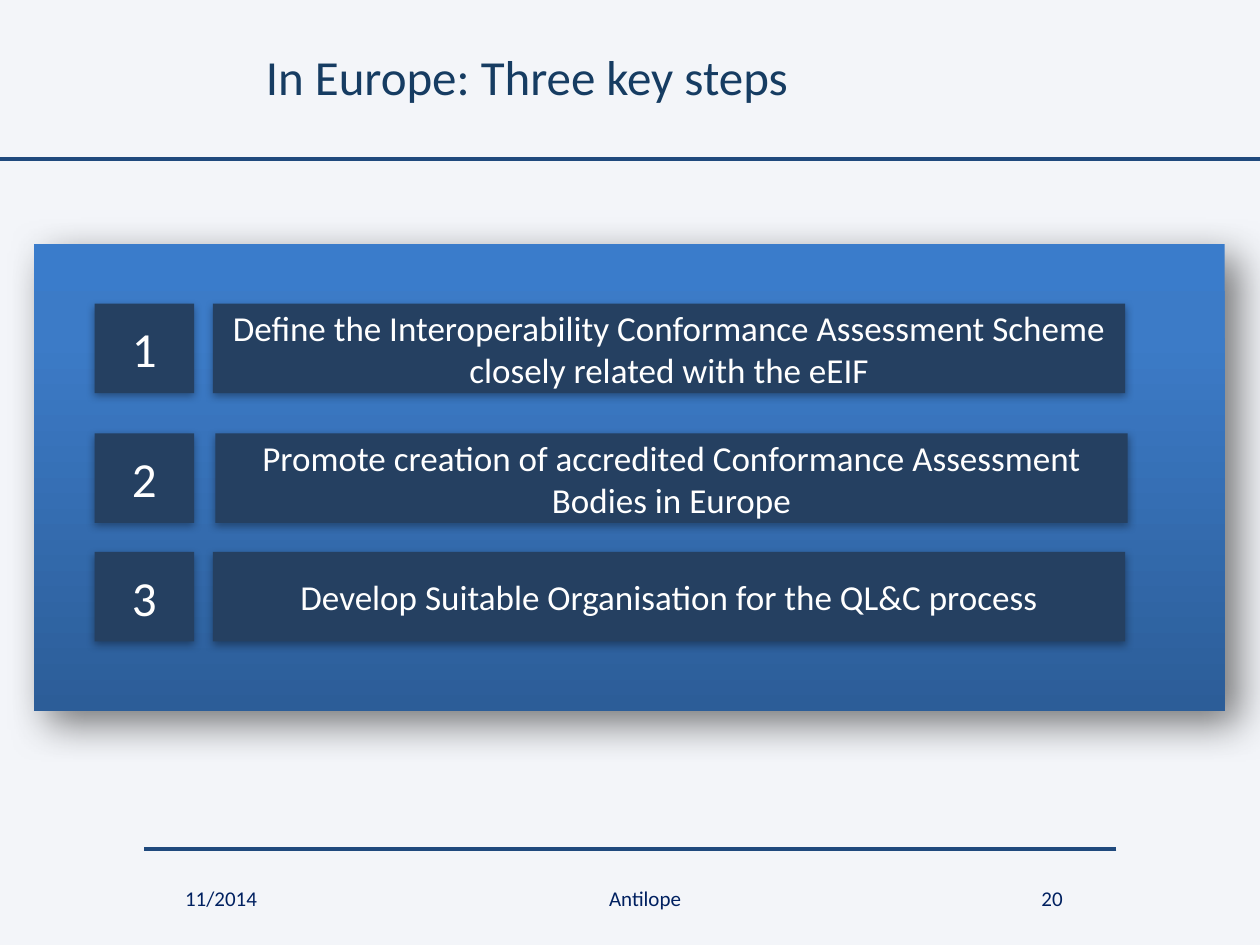
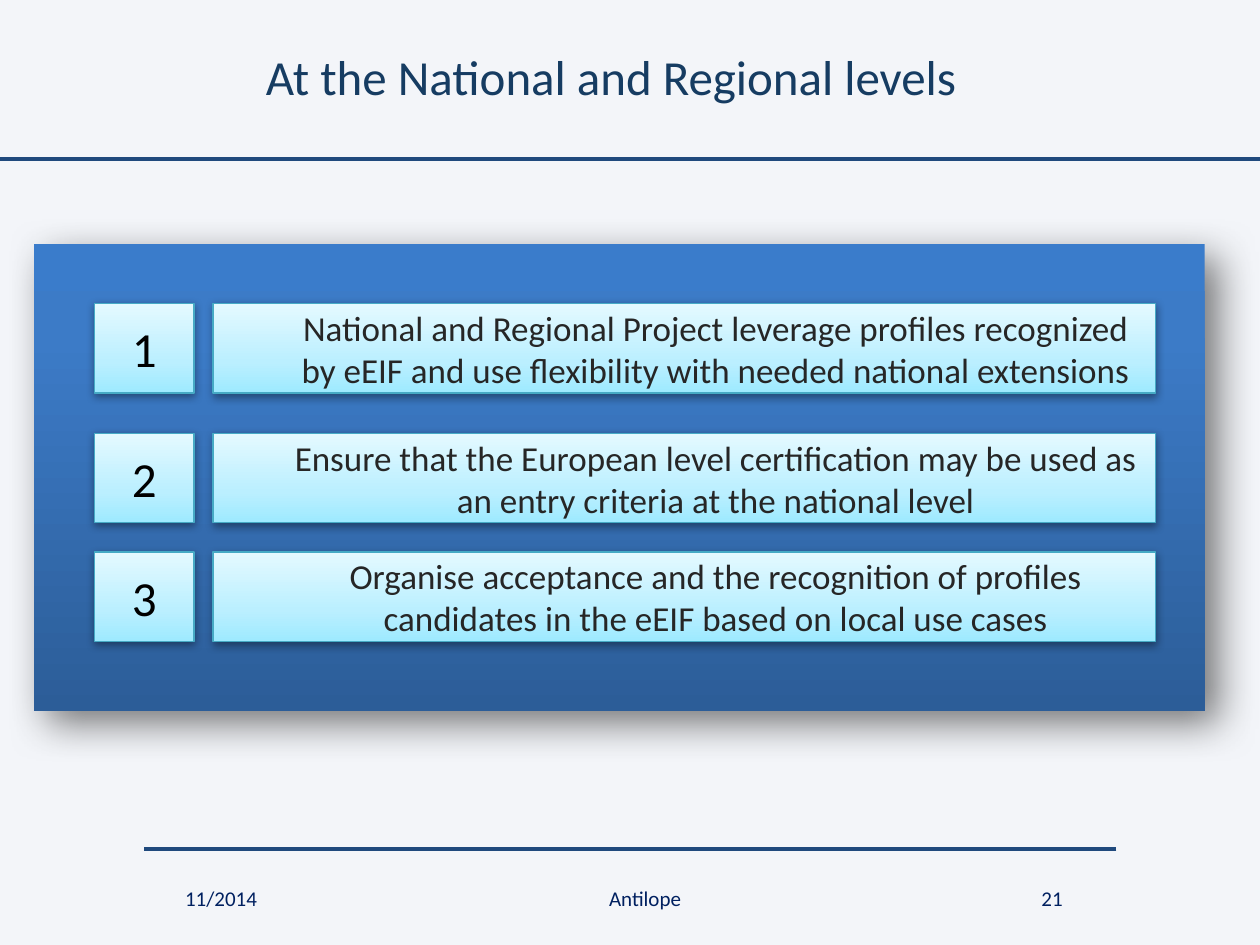
from lxml import etree
from pptx import Presentation
from pptx.dml.color import RGBColor
from pptx.enum import shapes, text
from pptx.oxml import ns
from pptx.util import Inches, Pt

FONT = "Calibri"
COLORS = {
    "background": "F3F5F9", "rule": "1F497D", "title": "163C62", "footer": "002060",
    "navy": "254061", "white": "FFFFFF", "black": "000000", "charcoal": "262626",
    "aqua_line": "46AAC5", "panel_shadow": "333333",
}
PANEL_STYLE = {
    "gradient": [(0, "3A7CCB"), (20, "3C7BC7"), (100, "2C5D98")], "angle": 90,
    "shadow": ("panel_shadow", 65, 23, 11, 45),
}
NAVY_STYLE = {
    "fill": "navy", "shadow": ("black", 35, 5, 1.8, 90),
    "number_color": "white", "step_color": "white", "indent": 0,
}
AQUA_STYLE = {
    "gradient": [(0, "9EEAFF"), (35, "BBEFFF"), (100, "E4F9FF")], "angle": 270,
    "line": "aqua_line", "shadow": ("black", 38, 5, 1.6, 90),
    "number_color": "black", "step_color": "charcoal", "indent": 0.5,
}
SLIDES = [
    {
        "title": "In Europe: Three key steps", "number": 20,
        "panel_width": 9.45, "step_width": 7.24, "step_lefts": (1.69, 1.71, 1.69),
        "style": NAVY_STYLE,
        "steps": [
            "Define the Interoperability Conformance Assessment Scheme closely related with the eEIF",
            "Promote creation of accredited Conformance Assessment Bodies in Europe",
            "Develop Suitable Organisation for the QL&C process",
        ],
    },
    {
        "title": "At the National and Regional levels", "number": 21,
        "panel_width": 9.29, "step_width": 7.48, "step_lefts": (1.69, 1.69, 1.69),
        "style": AQUA_STYLE,
        "steps": [
            "National and Regional Project leverage profiles recognized by eEIF and use flexibility with needed national extensions",
            "Ensure that the European level certification may be used as an entry criteria at the national level",
            "Organise acceptance and the recognition of profiles candidates in the eEIF based on local use cases",
        ],
    },
]
RULES = [(10, 0, 1.26), (8.86, 1.14, 6.74)]
ROW_TOPS = (2.41, 3.44, 4.38)
ROW_HEIGHT = 0.71
NUMBER_LEFT, NUMBER_WIDTH = 0.75, 0.79


def rgb(name):
    return RGBColor.from_string(COLORS[name])


def write(shape, content, size, color, align=text.PP_ALIGN.CENTER):
    frame = shape.text_frame
    frame.word_wrap = True
    frame.text = content
    paragraph = frame.paragraphs[0]
    paragraph.alignment = align
    for run in paragraph.runs:
        run.font.name = FONT
        run.font.size = Pt(size)
        run.font.color.rgb = rgb(color)
    return paragraph


def add_child(parent, tag, **attributes):
    child = etree.SubElement(parent, ns.qn(tag))
    for name, value in attributes.items():
        child.set(name, str(value))
    return child


def paint_gradient(shape, stops, angle):
    shape.fill.gradient()
    shape.fill.gradient_angle = (360 - angle) % 360
    stop_list = shape.element.spPr.find(".//" + ns.qn("a:gsLst"))
    for stop in list(stop_list):
        stop_list.remove(stop)
    for position, color in stops:
        stop = add_child(stop_list, "a:gs", pos=position * 1000)
        add_child(stop, "a:srgbClr", val=color)


def cast_shadow(shape, color, opacity, blur, distance, angle):
    shape.shadow.inherit = False
    effects = shape.element.spPr.find(ns.qn("a:effectLst"))
    shadow = add_child(effects, "a:outerShdw", blurRad=Pt(blur), dist=Pt(distance),
                       dir=angle * 60000, rotWithShape=0)
    shade = add_child(shadow, "a:srgbClr", val=COLORS[color])
    add_child(shade, "a:alpha", val=opacity * 1000)


def add_box(slide, left, top, width, height, style):
    box = slide.shapes.add_shape(shapes.MSO_SHAPE.RECTANGLE, Inches(left), Inches(top),
                                 Inches(width), Inches(height))
    if "gradient" in style:
        paint_gradient(box, style["gradient"], style["angle"])
    else:
        box.fill.solid()
        box.fill.fore_color.rgb = rgb(style["fill"])
    if "line" in style:
        box.line.color.rgb = rgb(style["line"])
        box.line.width = Pt(0.75)
    else:
        box.line.fill.background()
    cast_shadow(box, *style["shadow"])
    box.text_frame.vertical_anchor = text.MSO_ANCHOR.MIDDLE
    return box


def add_frame(slide, title_text, number):
    for start, end, top in RULES:
        rule = slide.shapes.add_connector(shapes.MSO_CONNECTOR.STRAIGHT, Inches(start),
                                          Inches(top), Inches(end), Inches(top))
        rule.line.color.rgb = rgb("rule")
        rule.line.width = Pt(2.25)
        add_child(rule._element.spPr, "a:effectLst")
    title = slide.shapes.title
    title.left, title.top = Inches(2.01), Inches(0.05)
    title.width, title.height = Inches(6.06), Inches(1.1)
    write(title, title_text, 28, "title", text.PP_ALIGN.LEFT)
    title.text_frame.vertical_anchor = text.MSO_ANCHOR.MIDDLE
    footers = [("11/2014", 1.14, 1.23), ("Antilope", 2.64, 4.96), (str(number), 7.84, 1.02)]
    for content, left, width in footers:
        footer = slide.shapes.add_textbox(Inches(left), Inches(6.98), Inches(width), Inches(0.4))
        write(footer, content, 12, "footer")


def add_steps(slide, content):
    style = content["style"]
    add_box(slide, 0.27, 1.94, content["panel_width"], 3.7, PANEL_STYLE)
    rows = zip(content["steps"], content["step_lefts"], ROW_TOPS)
    for number, (step, left, top) in enumerate(rows, 1):
        number_box = add_box(slide, NUMBER_LEFT, top, NUMBER_WIDTH, ROW_HEIGHT, style)
        write(number_box, str(number), 28, style["number_color"])
        step_box = add_box(slide, left, top, content["step_width"], ROW_HEIGHT, style)
        paragraph = write(step_box, step, 20, style["step_color"])
        if style["indent"]:
            paragraph.level = 1
            paragraph._p.get_or_add_pPr().set("marL", str(Inches(style["indent"])))


def main():
    presentation = Presentation()
    presentation.slide_width, presentation.slide_height = Inches(10), Inches(7.5)
    background = presentation.slide_master.background.fill
    background.solid()
    background.fore_color.rgb = rgb("background")
    for content in SLIDES:
        slide = presentation.slides.add_slide(presentation.slide_layouts[5])
        add_frame(slide, content["title"], content["number"])
        add_steps(slide, content)
    presentation.save("out.pptx")


if __name__ == "__main__":
    main()
